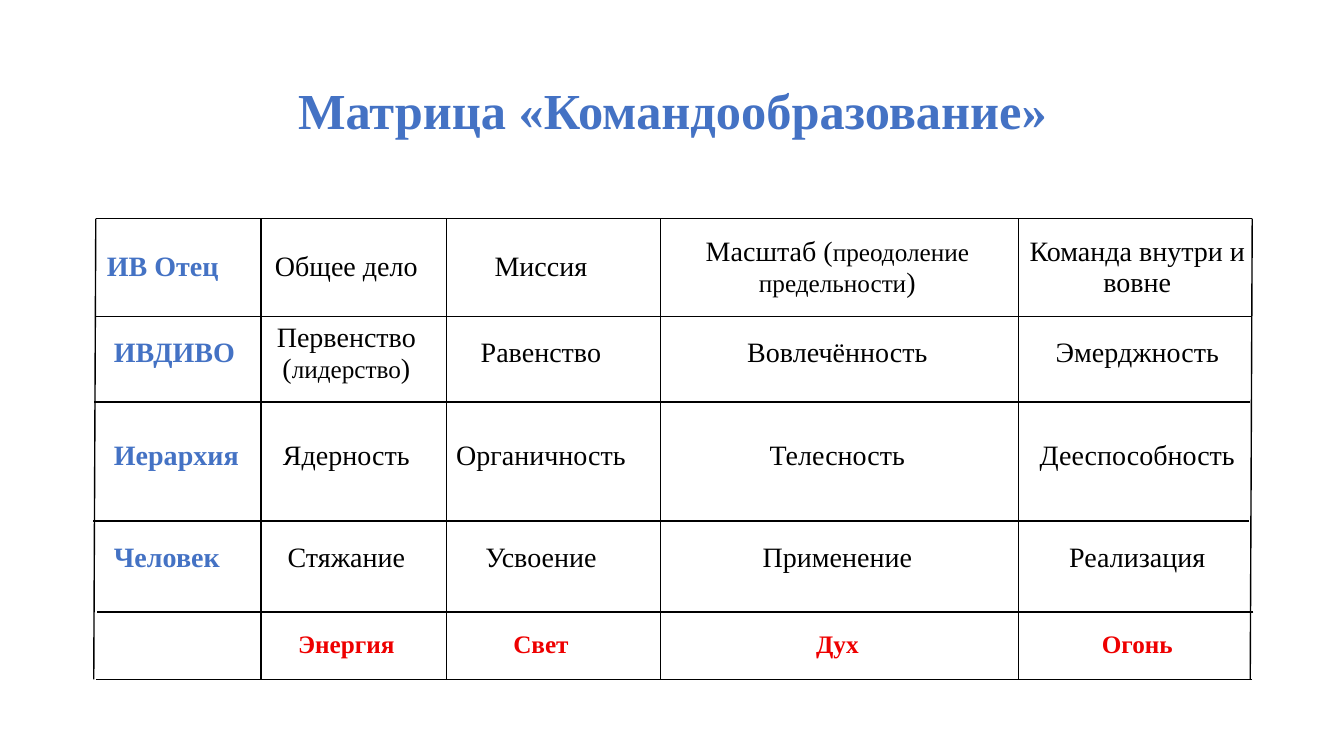
from lxml import etree
from pptx import Presentation
from pptx.dml.color import RGBColor
from pptx.enum.shapes import MSO_CONNECTOR
from pptx.enum.text import MSO_ANCHOR, PP_ALIGN
from pptx.oxml.ns import qn
from pptx.util import Inches, Pt

STRAIGHT = MSO_CONNECTOR.STRAIGHT
MIDDLE = MSO_ANCHOR.MIDDLE
LEFT, CENTER = PP_ALIGN.LEFT, PP_ALIGN.CENTER

COLORS = {"blue": "4472C4", "black": "000000", "red": "EE0000", "white": "FFFFFF"}
FONT = "Times New Roman"
TITLE_ONLY = 5


def write(frame, text, size=20, small=18, color="black", bold=False, align=CENTER, spacing=None):
    for number, line in enumerate(text.split("\n")):
        paragraph = frame.add_paragraph() if number else frame.paragraphs[0]
        paragraph.alignment = align
        paragraph.line_spacing = spacing
        for position, piece in enumerate(line.split("|")):
            run = paragraph.add_run()
            run.text = piece
            run.font.name = FONT
            run.font.size = Pt(small if position % 2 else size)
            run.font.bold = bold
            run.font.color.rgb = RGBColor.from_string(COLORS[color])


presentation = Presentation()
presentation.slide_width = Inches(13.33)
presentation.slide_height = Inches(7.5)
slide = presentation.slides.add_slide(presentation.slide_layouts[TITLE_ONLY])

title = slide.shapes.title
title.left, title.top = Inches(0.92), Inches(0.4)
title.width, title.height = Inches(11.5), Inches(1.45)
title.text_frame.vertical_anchor = MIDDLE
write(title.text_frame, "Матрица «Командообразование»", size=36, color="blue", bold=True, spacing=0.9)

levels = [
    ["ИВ Отец", "Общее дело", "Миссия", "Масштаб (|преодоление предельности|)", "Команда внутри и вовне"],
    ["ИВДИВО", "Первенство\n(|лидерство|)", "Равенство", "Вовлечённость", "Эмерджность"],
    ["Иерархия", "Ядерность", "Органичность", "Телесность", "Дееспособность"],
    ["Человек", "Стяжание", "Усвоение", "Применение", "Реализация"],
    ["", "Энергия", "Свет", "Дух", "Огонь"],
]
column_widths = [1.7, 1.63, 2.23, 3.65, 2.3]
row_heights = [0.96, 0.75, 1.28, 0.75, 0.75]

matrix = slide.shapes.add_table(
    len(levels), len(column_widths), Inches(0.92), Inches(2.17),
    Inches(sum(column_widths)), Inches(sum(row_heights))).table
matrix.first_row = False
matrix.horz_banding = False
for column, width in zip(matrix.columns, column_widths):
    column.width = Inches(width)
for row, height in zip(matrix.rows, row_heights):
    row.height = Inches(height)

last = len(levels) - 1
for r, level in enumerate(levels):
    for c, entry in enumerate(level):
        cell = matrix.cell(r, c)
        cell.fill.solid()
        cell.fill.fore_color.rgb = RGBColor.from_string(COLORS["white"])
        cell.vertical_anchor = MIDDLE
        cell.margin_left = cell.margin_right = Inches(0.07)
        cell.margin_top = cell.margin_bottom = 0
        if not entry:
            continue
        if c == 0:
            cell.margin_left = Inches(0.21 if r else 0.14)
            write(cell.text_frame, entry, color="blue", bold=True, align=LEFT)
        elif r == last:
            cell.margin_top = Inches(0.22)
            write(cell.text_frame, entry, size=18, color="red", bold=True)
        else:
            write(cell.text_frame, entry)

grid_top, grid_bottom, grid_width = 2.17, 6.74, 11.47
verticals = [(0.95, 0.93), (2.59, 2.59), (4.43, 4.43), (6.55, 6.55), (10.1, 10.1), (12.42, 12.4)]
horizontals = [(0.95, 2.17), (0.95, 3.14), (0.93, 3.99), (0.92, 5.17), (0.96, 6.07), (0.95, 6.74)]
grid_lines = [(top_x, grid_top, bottom_x, grid_bottom) for top_x, bottom_x in verticals]
grid_lines += [(x + grid_width, y, x, y) for x, y in horizontals]

for ends in grid_lines:
    grid_line = slide.shapes.add_connector(STRAIGHT, *[Inches(end) for end in ends])
    grid_line.line.color.rgb = RGBColor.from_string(COLORS["black"])
    grid_line.line.width = Pt(1)
    etree.SubElement(grid_line._element.spPr, qn("a:effectLst"))

presentation.save("out.pptx")
